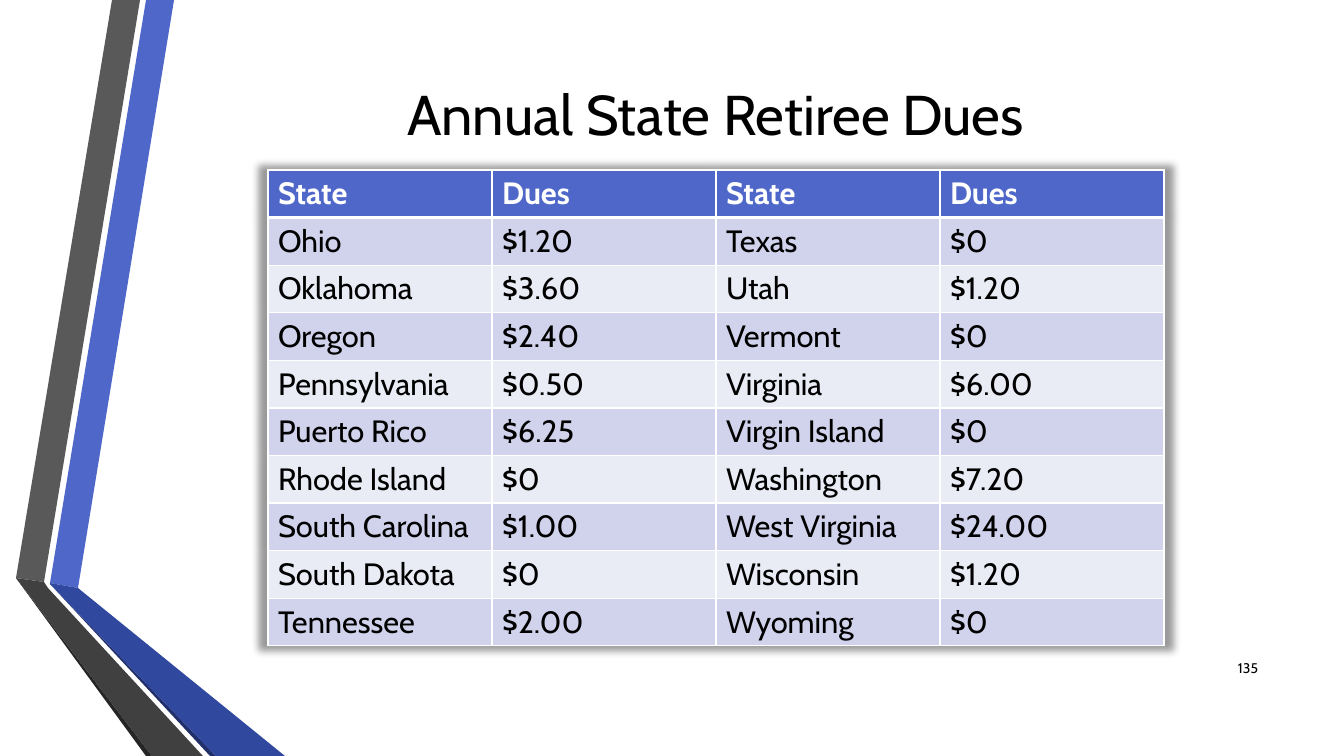
from lxml import etree
from pptx import Presentation
from pptx.dml.color import RGBColor
from pptx.enum.text import MSO_ANCHOR, PP_ALIGN
from pptx.oxml.ns import qn
from pptx.util import Pt

SCALE = 914400 / 100.8
FONT = "Cabin"
MIDDLE = MSO_ANCHOR.MIDDLE
CENTER, RIGHT = PP_ALIGN.CENTER, PP_ALIGN.RIGHT

BLACK = RGBColor(0x00, 0x00, 0x00)
WHITE = RGBColor(0xFF, 0xFF, 0xFF)
BLUE = RGBColor(0x4E, 0x67, 0xC8)
DEEP_BLUE = RGBColor(0x31, 0x48, 0x9F)
NAVY = RGBColor(0x21, 0x30, 0x6A)
GRAY = RGBColor(0x59, 0x59, 0x59)
CHARCOAL = RGBColor(0x40, 0x40, 0x40)
NEAR_BLACK = RGBColor(0x26, 0x26, 0x26)
BANDS = (RGBColor(0xD0, 0xD3, 0xEB), RGBColor(0xE9, 0xEB, 0xF5))

RIBBONS = [
    (BLUE, [(50, 583), (78, 588), (174, 0), (146, 0)]),
    (GRAY, [(140, 0), (112, 0), (16, 578), (44, 582)]),
    (NEAR_BLACK, [(16, 578), (146, 756), (152, 756)]),
    (NAVY, [(50, 584), (210, 756), (216, 756)]),
    (DEEP_BLUE, [(50, 583), (50, 584), (216, 756), (285, 756), (78, 588)]),
    (CHARCOAL, [(203, 756), (48, 588), (44, 582), (16, 578), (152, 756)]),
]

DUES = [
    ("State", "Dues", "State", "Dues"),
    ("Ohio", "$1.20", "Texas", "$0"),
    ("Oklahoma", "$3.60", "Utah", "$1.20"),
    ("Oregon", "$2.40", "Vermont", "$0"),
    ("Pennsylvania", "$0.50", "Virginia", "$6.00"),
    ("Puerto Rico", "$6.25", "Virgin Island", "$0"),
    ("Rhode Island", "$0", "Washington", "$7.20"),
    ("South Carolina", "$1.00", "West Virginia", "$24.00"),
    ("South Dakota", "$0", "Wisconsin", "$1.20"),
    ("Tennessee", "$2.00", "Wyoming", "$0"),
]


def px(length):
    """Turn pixels into EMU."""
    return round(length * SCALE)


def set_text(text_frame, text, size, color, alignment=None, bold=False):
    """Write one formatted paragraph, centred vertically by its frame."""
    text_frame.text = text
    paragraph = text_frame.paragraphs[0]
    paragraph.alignment = alignment
    paragraph.font.name = FONT
    paragraph.font.size = Pt(size)
    paragraph.font.bold = bold
    paragraph.font.color.rgb = color


def add_ribbons(slide, left, top):
    """Draw the folded ribbons from the given corner."""
    for color, points in RIBBONS:
        corners = [(px(left + x), px(top + y)) for x, y in points]
        builder = slide.shapes.build_freeform(*corners[0])
        builder.add_line_segments(corners[1:], close=True)
        ribbon = builder.convert_to_shape()
        ribbon.shadow.inherit = False
        ribbon.fill.solid()
        ribbon.fill.fore_color.rgb = color
        ribbon.line.fill.background()


def add_title(slide, left, top, width, height):
    """Place the slide title in its placeholder."""
    title = slide.shapes.title
    title.left, title.top = px(left), px(top)
    title.width, title.height = px(width), px(height)
    title.text_frame.vertical_anchor = MIDDLE
    set_text(title.text_frame, "Annual State Retiree Dues", 40, BLACK, CENTER)


def add_border(cell, edge, width):
    """Give one cell edge a white line."""
    properties = cell._tc.get_or_add_tcPr()
    line = etree.SubElement(properties, qn(f"a:ln{edge}"), w=str(Pt(width)))
    fill = etree.SubElement(line, qn("a:solidFill"))
    etree.SubElement(fill, qn("a:srgbClr"), val=str(WHITE))


def add_table_shadow(table):
    """Surround the table with a soft shadow."""
    effects = etree.Element(qn("a:effectLst"))
    shadow = etree.SubElement(
        effects, qn("a:outerShdw"), blurRad=str(Pt(5)),
        sx="102000", sy="102000", algn="ctr", rotWithShape="0")
    color = etree.SubElement(shadow, qn("a:srgbClr"), val=str(BLACK))
    etree.SubElement(color, qn("a:alpha"), val="40000")
    table._tbl.tblPr.insert(0, effects)


def add_dues_table(slide, left, top, width, height):
    """Fill the table of dues with a header and alternating bands."""
    frame = slide.shapes.add_table(
        len(DUES), len(DUES[0]), px(left), px(top), px(width), px(height))
    table = frame.table
    add_table_shadow(table)
    for row, values in enumerate(DUES):
        header = row == 0
        for column, value in enumerate(values):
            cell = table.cell(row, column)
            cell.vertical_anchor = MIDDLE
            add_border(cell, "L", 1)
            add_border(cell, "R", 1)
            if header:
                add_border(cell, "T", 1)
            add_border(cell, "B", 3 if header else 1)
            cell.fill.solid()
            cell.fill.fore_color.rgb = BLUE if header else BANDS[(row - 1) % 2]
            set_text(cell.text_frame, value, 22,
                     WHITE if header else BLACK, bold=header)


def add_page_number(slide, left, top, width, height):
    """Write the page number at the lower right."""
    box = slide.shapes.add_textbox(px(left), px(top), px(width), px(height))
    box.text_frame.word_wrap = True
    box.text_frame.vertical_anchor = MIDDLE
    set_text(box.text_frame, "135", 10, BLACK, RIGHT)


def main():
    """Build and save the slide."""
    presentation = Presentation()
    presentation.slide_width = px(1344)
    presentation.slide_height = px(756)
    slide = presentation.slides.add_slide(presentation.slide_layouts[5])
    add_ribbons(slide, 0, 0)
    add_dues_table(slide, 268, 170, 896, 470)
    add_title(slide, 163, 16, 1105, 194)
    add_page_number(slide, 1208, 648, 60, 40)
    presentation.save("out.pptx")


if __name__ == "__main__":
    main()
